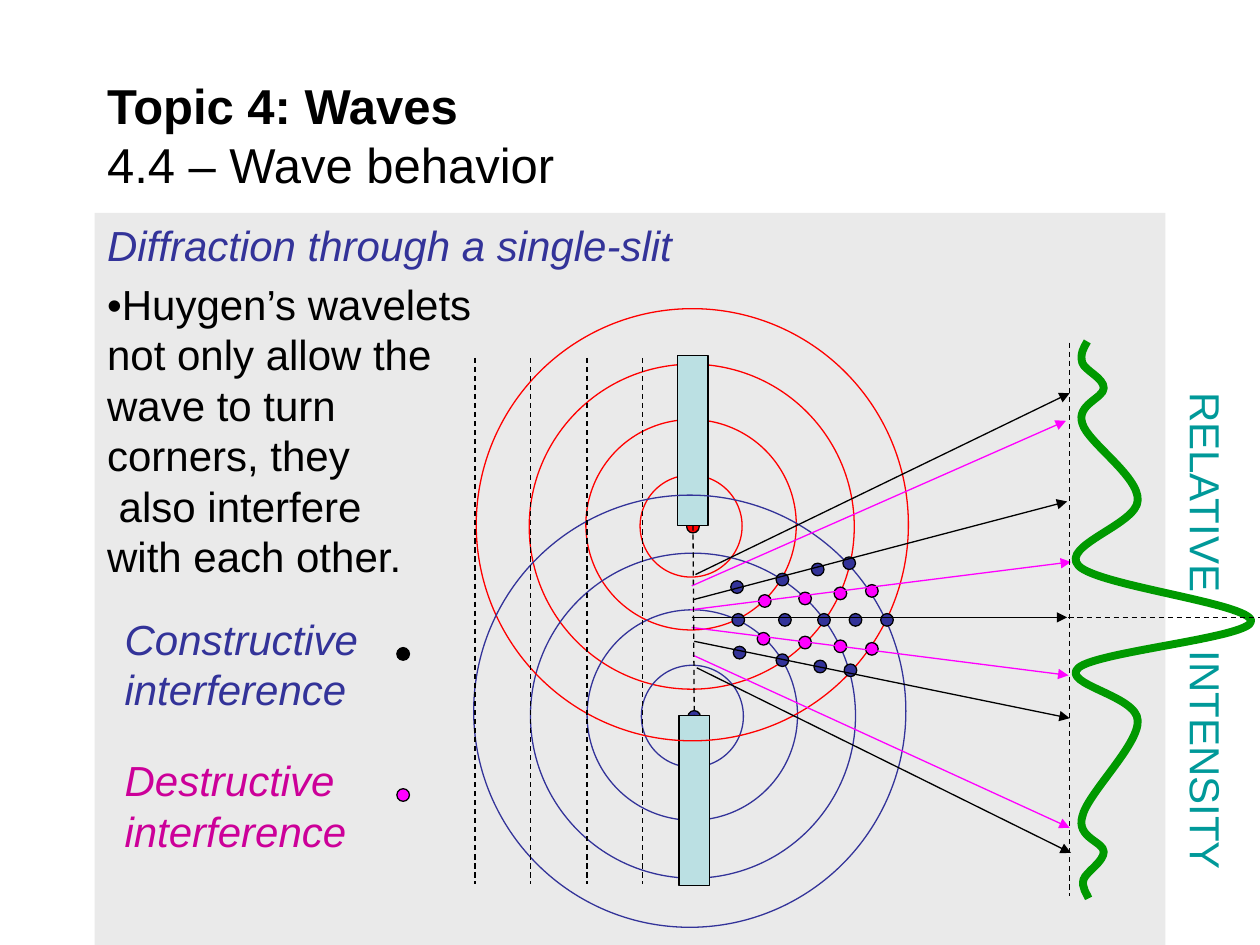
"""Build the single-slit diffraction slide with its wavelets and intensity curve."""
from lxml import etree
from pptx import Presentation
from pptx import util as u
from pptx.dml.color import RGBColor
from pptx.enum import dml, shapes, text
from pptx.oxml import ns

PX = 9144
BLACK = RGBColor(0x00, 0x00, 0x00)
GREY = RGBColor(0xEA, 0xEA, 0xEA)
RED = RGBColor(0xFF, 0x00, 0x00)
NAVY = RGBColor(0x33, 0x33, 0x99)
PINK = RGBColor(0xFF, 0x00, 0xFF)
PLUM = RGBColor(0xCC, 0x00, 0x99)
TEAL = RGBColor(0x00, 0x99, 0x99)
PALE = RGBColor(0xBB, 0xE0, 0xE3)
GREEN = RGBColor(0x00, 0x99, 0x00)

deck = Presentation()
deck.slide_width, deck.slide_height = 1000 * PX, 750 * PX
slide = deck.slides.add_slide(deck.slide_layouts[1])
drawing = slide.shapes


def add_figure(kind, box, fill=None, outline=BLACK):
    figure = drawing.add_shape(kind, *(v * PX for v in box))
    figure.shadow.inherit = False
    if fill is None:
        figure.fill.background()
    else:
        figure.fill.solid()
        figure.fill.fore_color.rgb = fill
    figure.line.color.rgb = outline
    figure.line.width = u.Pt(0.75)
    return figure


def add_ray(ends, color=BLACK, dashed=False):
    ray = drawing.add_connector(shapes.MSO_CONNECTOR.STRAIGHT, *(v * PX for v in ends))
    ray.line.color.rgb = color
    ray.line.width = u.Pt(0.75)
    if dashed:
        ray.line.dash_style = dml.MSO_LINE.DASH
    else:
        etree.SubElement(ray.line._get_or_add_ln(), ns.qn("a:tailEnd"), type="triangle")
    etree.SubElement(ray._element.spPr, ns.qn("a:effectLst"))
    return ray


OVAL, RECT = shapes.MSO_SHAPE.OVAL, shapes.MSO_SHAPE.RECTANGLE

heading, lesson = drawing.title, slide.placeholders[1]
for part, box in ((heading, (75, 58, 850, 98)), (lesson, (75, 169, 850, 581))):
    part.left, part.top, part.width, part.height = (v * PX for v in box)
    part.text_frame.auto_size = text.MSO_AUTO_SIZE.NONE
    part.text_frame.word_wrap = True
heading.text_frame.vertical_anchor = text.MSO_ANCHOR.MIDDLE
lesson.text_frame.vertical_anchor = text.MSO_ANCHOR.TOP
lesson.fill.solid()
lesson.fill.fore_color.rgb = GREY

title_line = heading.text_frame.paragraphs[0]
title_line.alignment = text.PP_ALIGN.LEFT
topic = title_line.add_run()
topic.text = "Topic 4: Waves"
title_line.add_line_break()
section = title_line.add_run()
section.text = "4.4 – Wave behavior"
for run, bold in ((topic, True), (section, False)):
    for name, value in {"name": "Arial", "size": u.Pt(28), "bold": bold}.items():
        setattr(run.font, name, value)
    run.font.color.rgb = BLACK

lesson.text_frame.text = (
    "Diffraction through a single-slit\n"
    "•Huygen’s wavelets\vnot only allow the\vwave to turn\vcorners, they\v"
    " also interfere\vwith each other."
)
styles = ((NAVY, True, 0), (BLACK, False, 5))
for paragraph, (color, italic, before) in zip(lesson.text_frame.paragraphs, styles):
    paragraph.space_before = u.Pt(before)
    props = paragraph._p.get_or_add_pPr()
    props.set("marL", "0")
    props.set("indent", "0")
    etree.SubElement(props, ns.qn("a:buNone"))
    for run in paragraph.runs:
        for name, value in {"name": "Arial", "size": u.Pt(24), "italic": italic}.items():
            setattr(run.font, name, value)
        run.font.color.rgb = color

wavelets = (
    (RED, (545, 413), ((508, 377, 81), (465, 333, 167), (420, 289, 258))),
    (NAVY, (546, 564), ((509, 528, 81), (466, 484, 167), (421, 439, 258))),
)
for color, source, rings in wavelets:
    add_figure(OVAL, (*source, 10, 10), color)
    for left, top, size in rings:
        add_figure(OVAL, (left, top, size, size), None, color)

upper_wall = add_figure(RECT, (538, 282, 24, 135), PALE)
lower_wall = add_figure(RECT, (539, 568, 24, 135), PALE)
add_figure(OVAL, (378, 245, 343, 343), None, RED)
add_figure(OVAL, (376, 393, 343, 343), None, NAVY)

crossings = {
    NAVY: ((581, 487), (618, 487), (649, 487), (674, 487), (699, 487),
           (580, 461), (616, 455), (644, 447), (669, 442),
           (582, 513), (616, 519), (646, 524), (670, 527)),
    PINK: ((602, 472), (634, 470), (662, 466), (687, 464),
           (601, 502), (634, 505), (662, 508), (687, 510)),
}
for color, spots in crossings.items():
    for spot in spots:
        add_figure(OVAL, (*spot, 10, 10), color)

rays = {
    BLACK: ((549, 490, 847, 490), (550, 476, 847, 398), (551, 509, 849, 570),
            (552, 456, 849, 312), (553, 530, 850, 677)),
    PINK: ((548, 484, 850, 446), (549, 465, 846, 334), (549, 498, 848, 536),
           (550, 520, 849, 657)),
}
for color, tracks in rays.items():
    for ends in tracks:
        add_ray(ends, color)

intensity = (
    (863, 271), (860, 276), (857, 281), (859, 288), (861, 294), (876, 300), (876, 308),
    (876, 316), (854, 321), (859, 336), (863, 351), (904, 378), (903, 397),
    (903, 416), (841, 433), (856, 449), (871, 465), (993, 479), (993, 493),
    (993, 506), (871, 517), (856, 530), (841, 543), (903, 552), (903, 572),
    (904, 591), (863, 630), (859, 648), (854, 665), (876, 668), (876, 676),
    (876, 684), (862, 692), (860, 698), (858, 704), (863, 710), (864, 713),
)
builder = drawing.build_freeform(*intensity[0], scale=PX)
builder.add_line_segments(intensity[1:], close=False)
curve = builder.convert_to_shape()
segments = list(curve._element.iter(ns.qn("a:lnTo")))
for i in range(0, len(segments), 3):
    bend = etree.Element(ns.qn("a:cubicBezTo"))
    segments[i].addprevious(bend)
    for segment in segments[i:i + 3]:
        bend.append(segment[0])
        segment.getparent().remove(segment)
curve.shadow.inherit = False
curve.fill.background()
curve.line.color.rgb = GREEN
curve.line.width = u.Pt(4.5)

wavefronts = [(x, 284, x, 702) for x in (377, 421, 466, 510)]
for ends in ((849, 272, 849, 711), (848, 490, 1001, 490), *wavefronts):
    add_ray(ends, dashed=True)
slit = add_ray((550, 417, 551, 568), dashed=True)
slit.begin_connect(upper_wall, 2)
slit.end_connect(lower_wall, 0)

for top, dot in ((514, BLACK), (626, PINK)):
    add_figure(OVAL, (315, top, 10, 10), dot)
labels = (
    ("Constructive interference", (89, 482, 249, 90), NAVY, True, 0),
    ("Destructive interference", (89, 594, 249, 90), PLUM, True, 0),
    ("RELATIVE\tINTENSITY", (757, 477, 401, 50), TEAL, False, 90),
)
for words, box, color, italic, angle in labels:
    label = drawing.add_textbox(*(v * PX for v in box))
    label.rotation = angle
    label.text_frame.word_wrap = True
    label.text_frame.text = words
    caption = label.text_frame.paragraphs[0]
    for name, value in {"name": "Arial", "size": u.Pt(24), "italic": italic}.items():
        setattr(caption.runs[0].font, name, value)
    caption.runs[0].font.color.rgb = color
    if "\t" in words:
        stops = etree.SubElement(caption._p.get_or_add_pPr(), ns.qn("a:tabLst"))
        etree.SubElement(stops, ns.qn("a:tab"), pos=str(205 * PX), algn="l")

deck.save("out.pptx")
